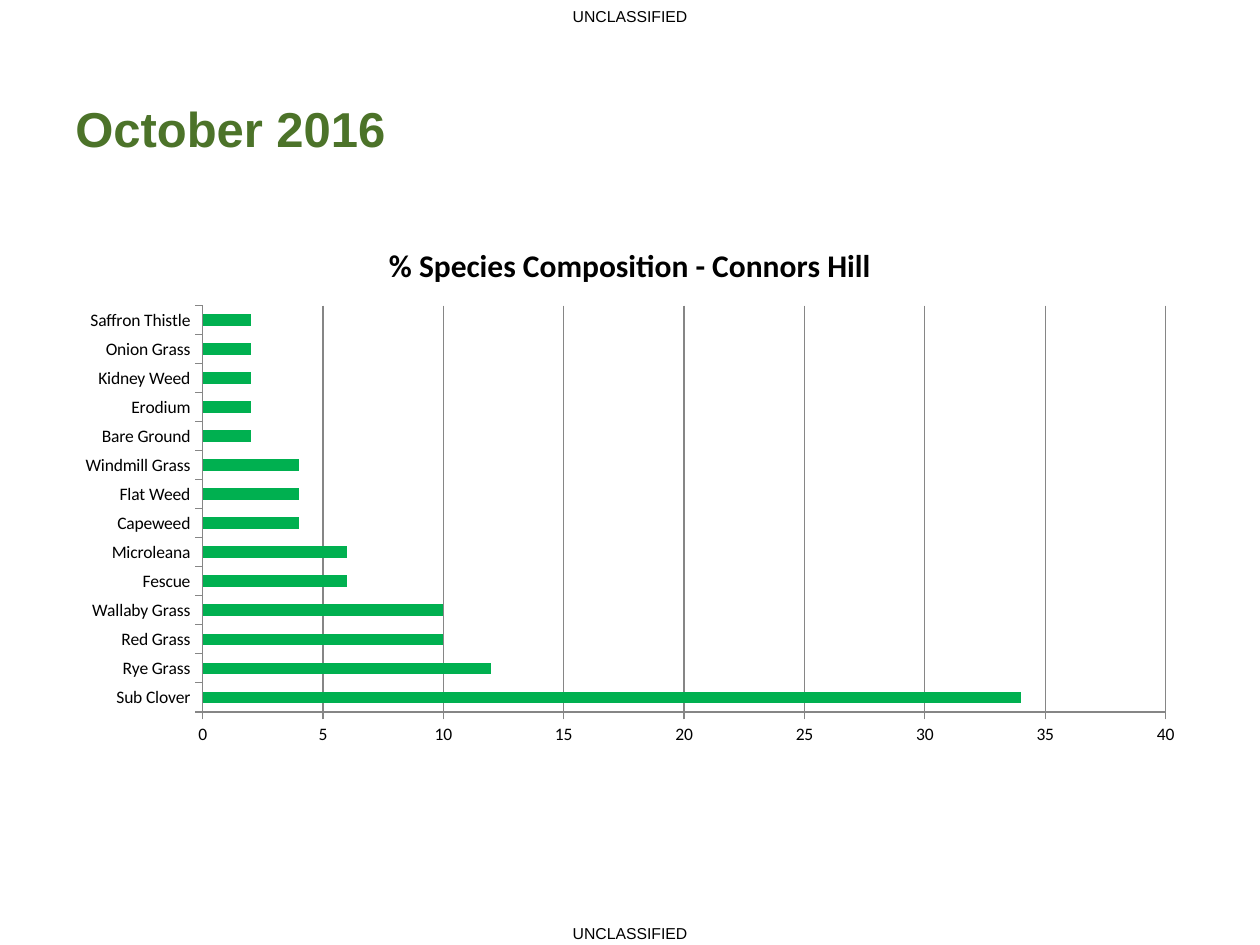
from pptx import Presentation
from pptx.chart.data import CategoryChartData as ChartData
from pptx.dml.color import RGBColor
from pptx.enum.chart import XL_CHART_TYPE as Kind, XL_TICK_MARK as Tick
from pptx.enum.text import MSO_ANCHOR as Anchor, PP_ALIGN as Align
from pptx.util import Pt

WIDE, HIGH = 720, 540
SPECIES = {
    "Sub Clover": 34, "Rye Grass": 12, "Red Grass": 10, "Wallaby Grass": 10,
    "Fescue": 6, "Microleana": 6, "Capeweed": 4, "Flat Weed": 4,
    "Windmill Grass": 4, "Bare Ground": 2, "Erodium": 2, "Kidney Weed": 2,
    "Onion Grass": 2, "Saffron Thistle": 2,
}


def color(code):
    return RGBColor.from_string(code)


def write(frame, text, size, font="Arial", ink="000000", bold=False,
          align=Align.LEFT):
    para = frame.paragraphs[0]
    para.alignment = align
    run = para.add_run()
    run.text = text
    face = run.font
    face.name, face.size, face.bold = font, Pt(size), bold
    face.color.rgb = color(ink)


class Page:
    """Holds the slide and its colours."""
    head, bar, grid, ink = "4C7329", "00B050", "868686", "000000"

    def __init__(self, slide):
        self.slide = slide

    def text(self, text, x, y, w, h, **form):
        box = self.slide.shapes.add_textbox(Pt(x), Pt(y), Pt(w), Pt(h))
        frame = box.text_frame
        frame.word_wrap = True
        frame.vertical_anchor = Anchor.MIDDLE
        write(frame, text, **form)

    def axis(self, axis, grid):
        axis.major_tick_mark = Tick.OUTSIDE
        axis.minor_tick_mark = Tick.NONE
        axis.has_major_gridlines = grid
        lines = [axis.format.line]
        if grid:
            lines.append(axis.major_gridlines.format.line)
        for line in lines:
            line.color.rgb = color(self.grid)
            line.width = Pt(0.75)

    def bars(self, title, items, x, y, w, h):
        data = ChartData()
        data.categories = list(items)
        data.add_series("Series 1", list(items.values()))
        chart = self.slide.shapes.add_chart(
            Kind.BAR_CLUSTERED, Pt(x), Pt(y), Pt(w), Pt(h), data).chart
        chart.font.name, chart.font.size = "Calibri", Pt(10)
        chart.font.color.rgb = color(self.ink)
        chart.has_legend = False
        chart.has_title = True
        write(chart.chart_title.text_frame, title, 18, font="Calibri",
              bold=True, align=Align.CENTER)
        chart.chart_title.include_in_layout = False
        self.axis(chart.category_axis, False)
        self.axis(chart.value_axis, True)
        chart.value_axis.minimum_scale = 0
        chart.value_axis.maximum_scale = 40
        chart.value_axis.major_unit = 5
        plot = chart.plots[0]
        plot.gap_width = 150
        plot.vary_by_categories = False
        fill = plot.series[0].format.fill
        fill.solid()
        fill.fore_color.rgb = color(self.bar)


def main():
    deck = Presentation()
    deck.slide_width, deck.slide_height = Pt(WIDE), Pt(HIGH)
    page = Page(deck.slides.add_slide(deck.slide_layouts[6]))
    for top in (0, 524.16):
        page.text("UNCLASSIFIED", 0, top, WIDE, 18, size=9,
                  align=Align.CENTER)
    page.text("October 2016", 36, 34.56, 648, 77, size=28, ink=page.head,
              bold=True)
    page.bars("% Species Composition - Connors Hill", SPECIES,
              36, 126, 648, 305.28)
    deck.save("out.pptx")


if __name__ == "__main__":
    main()
